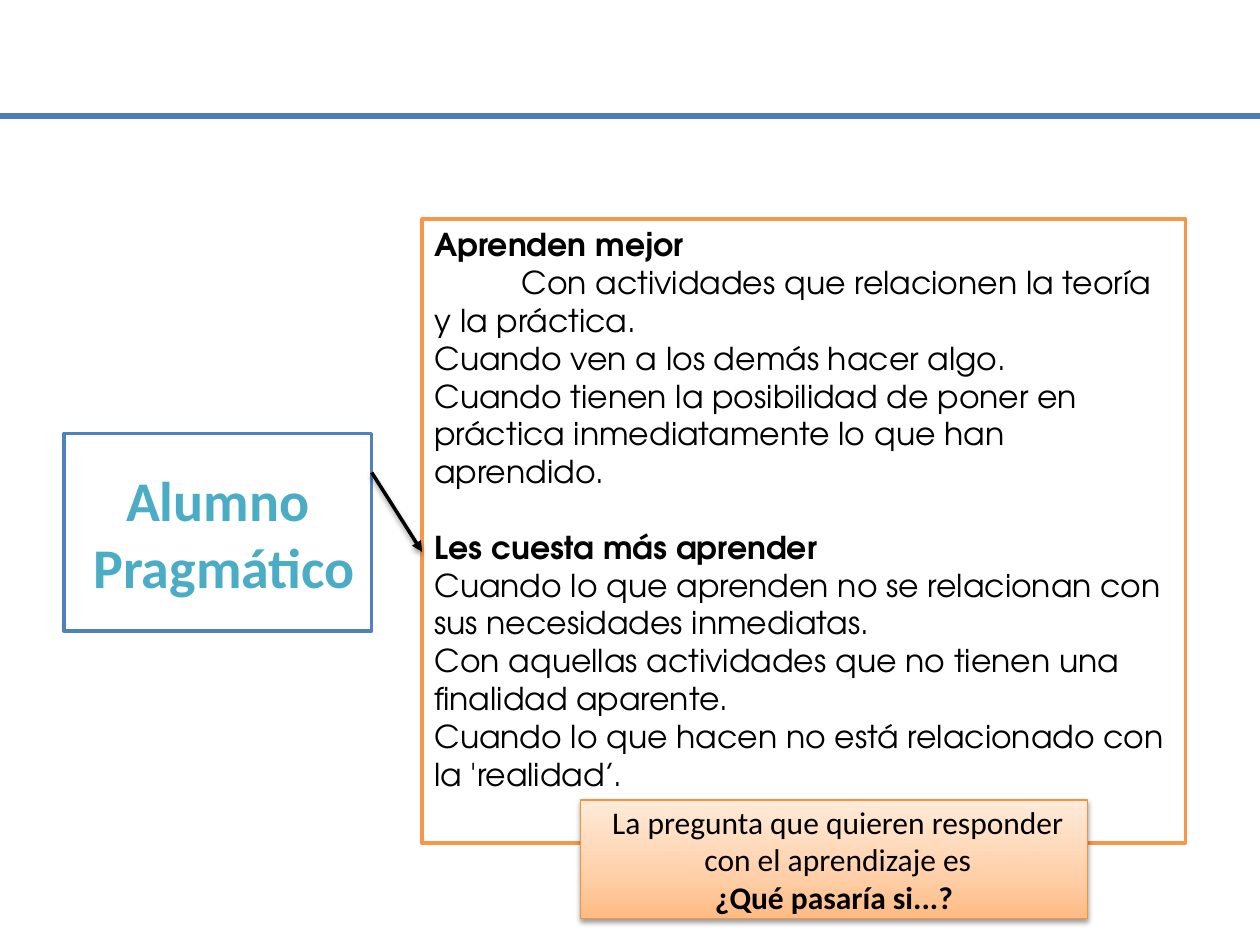
import copy

import pptx
import pptx.dml.color
import pptx.enum.shapes
import pptx.enum.text
import pptx.oxml
import pptx.oxml.ns
import pptx.util

Inches = pptx.util.Inches
Pt = pptx.util.Pt
qn = pptx.oxml.ns.qn
PP_ALIGN = pptx.enum.text.PP_ALIGN
MSO_ANCHOR = pptx.enum.text.MSO_ANCHOR

SHADOW = (
    '<a:outerShdw xmlns:a="http://schemas.openxmlformats.org/drawingml/2006/main" '
    'blurRad="39370" dist="20320" dir="5400000" rotWithShape="0">'
    '<a:srgbClr val="000000"><a:alpha val="38000"/></a:srgbClr></a:outerShdw>'
)


def color(value):
    return pptx.dml.color.RGBColor.from_string(value)


class SlideBuilder:
    """Holds the style and the slide being drawn."""

    def __init__(self, slide, body_size=Pt(18)):
        self.slide = slide
        self.body_size = body_size

    def line(self, start, end, stroke, width, arrow=False, shadow=False):
        connector = self.slide.shapes.add_connector(
            pptx.enum.shapes.MSO_CONNECTOR.STRAIGHT,
            *(Inches(value) for value in start + end))
        connector.line.color.rgb = color(stroke)
        connector.line.width = Pt(width)
        properties = connector._element.spPr
        if arrow:
            head = properties.find(qn("a:ln")).makeelement(qn("a:tailEnd"), {"type": "triangle"})
            properties.find(qn("a:ln")).append(head)
        effects = properties.makeelement(qn("a:effectLst"), {})
        properties.append(effects)
        if shadow:
            effects.append(pptx.oxml.parse_xml(SHADOW))

    def box(self, place, stroke, width, fill="FFFFFF", gradient=None, shadow=False):
        box = self.slide.shapes.add_shape(
            pptx.enum.shapes.MSO_SHAPE.RECTANGLE, *(Inches(value) for value in place))
        if gradient:
            self.gradient(box, gradient)
        else:
            box.fill.solid()
            box.fill.fore_color.rgb = color(fill)
        box.line.color.rgb = color(stroke)
        box.line.width = Pt(width)
        box.shadow.inherit = False
        if shadow:
            box._element.spPr.find(qn("a:effectLst")).append(pptx.oxml.parse_xml(SHADOW))
        return box

    def gradient(self, box, stops):
        box.fill.gradient()
        box.fill.gradient_angle = 90
        stop_list = box._element.spPr.find(qn("a:gradFill")).find(qn("a:gsLst"))
        while len(stop_list) < len(stops):
            stop_list.append(copy.deepcopy(stop_list[0]))
        for stop, (position, value) in zip(box.fill.gradient_stops, stops):
            stop.position = position
            stop.color.rgb = color(value)

    def text(self, box, paragraphs, font, ink="000000", size=None,
             align=PP_ALIGN.LEFT, anchor=MSO_ANCHOR.MIDDLE):
        frame = box.text_frame
        frame.word_wrap = True
        frame.vertical_anchor = anchor
        for index, (words, bold, layout) in enumerate(paragraphs):
            para = frame.paragraphs[0] if index == 0 else frame.add_paragraph()
            para.alignment = align
            para.space_before = layout.get("before", Pt(0))
            for name in ("marL", "indent"):
                if name in layout:
                    para._p.get_or_add_pPr().set(name, str(int(layout[name])))
            span = para.add_run()
            span.text = words
            span.font.color.rgb = color(ink)
            formats = {"name": font, "size": size or self.body_size, "bold": bold}
            for name, value in formats.items():
                setattr(span.font, name, value)


def main():
    deck = pptx.Presentation()
    deck.slide_width, deck.slide_height = Inches(10), Inches(7.5)
    page = SlideBuilder(deck.slides.add_slide(deck.slide_layouts[6]))

    # Header rule
    page.line((0, 0.92), (10, 0.92), "4A7DBA", 3)

    # How this kind of student learns
    learning = page.box((3.35, 1.74, 6.06, 4.95), "F79646", 2)
    page.text(learning, [
        ("Aprenden mejor", True, {}),
        ("Con actividades que relacionen la teoría y la práctica.", False,
         {"indent": Inches(0.69)}),
        ("Cuando ven a los demás hacer algo.", False, {}),
        ("Cuando tienen la posibilidad de poner en práctica inmediatamente "
         "lo que han aprendido.", False, {}),
        ("Les cuesta más aprender", True, {"before": Pt(21.6)}),
        ("Cuando lo que aprenden no se relacionan con sus necesidades inmediatas.",
         False, {}),
        ("Con aquellas actividades que no tienen una finalidad aparente.", False, {}),
        ("Cuando lo que hacen no está relacionado con la 'realidad’.", False, {}),
    ], "TeX Gyre Adventor", anchor=MSO_ANCHOR.TOP)
    learning.text_frame.auto_size = pptx.enum.text.MSO_AUTO_SIZE.SHAPE_TO_FIT_TEXT

    # Student type and its arrow
    student = page.box((0.51, 3.44, 2.44, 1.57), "4F81BD", 2)
    page.text(student, [
        ("Alumno", True, {}),
        ("Pragmático", True, {"marL": Inches(0.1), "indent": 0}),
    ], "Calibri", ink="4BACC6", size=Pt(32), align=PP_ALIGN.CENTER)
    page.line((2.95, 3.75), (3.35, 4.38), "000000", 2, arrow=True, shadow=True)

    # Guiding question
    question = page.box(
        (4.61, 6.35, 4.02, 0.94), "F5913F", 0.75, shadow=True,
        gradient=[(0, "FFBB82"), (0.35, "FFCFA8"), (1, "FFEBD9")])
    page.text(question, [
        ("La pregunta que quieren responder con el aprendizaje es", False,
         {"marL": Inches(0.06), "indent": 0}),
        ("¿Qué pasaría si...?", True, {}),
    ], "Calibri", align=PP_ALIGN.CENTER)

    deck.save("out.pptx")


if __name__ == "__main__":
    main()
